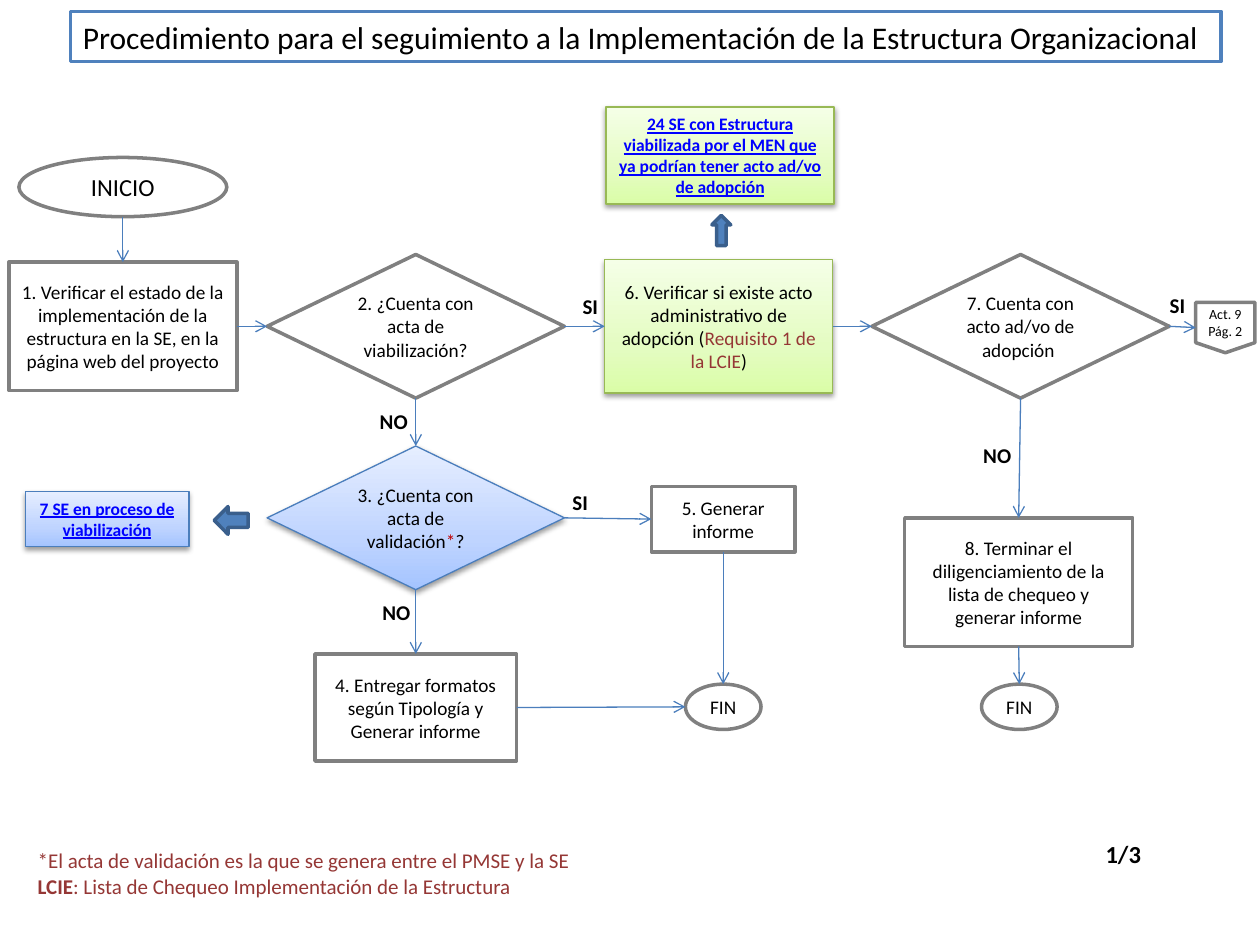
import pptx
import pptx.util
import pptx.dml.color
import pptx.enum.shapes
import pptx.enum.text
import pptx.oxml
import pptx.oxml.ns
from lxml import etree

RGB = pptx.dml.color.RGBColor
KIND = pptx.enum.shapes.MSO_SHAPE
ALIGN = pptx.enum.text.PP_ALIGN
ANCHOR = pptx.enum.text.MSO_ANCHOR
FIT = pptx.enum.text.MSO_AUTO_SIZE
Pt = pptx.util.Pt
qn = pptx.oxml.ns.qn

BLACK = RGB(0x00, 0x00, 0x00)
WHITE = RGB(0xFF, 0xFF, 0xFF)
GRAY = RGB(0x80, 0x80, 0x80)
BLUE = RGB(0x4F, 0x81, 0xBD)
BLUE_LINE = RGB(0x4B, 0x7E, 0xBC)
DARK_BLUE = RGB(0x3A, 0x5F, 0x8C)
GREEN_LINE = RGB(0x98, 0xB9, 0x55)
LINK_BLUE = RGB(0x00, 0x00, 0xFF)
MAROON = RGB(0x95, 0x37, 0x35)
RED = RGB(0xC0, 0x00, 0x00)
GREENS = [(0, RGB(0xDA, 0xFD, 0xA7)), (35, RGB(0xE4, 0xFC, 0xC2)), (100, RGB(0xF5, 0xFF, 0xE7))]
BLUES = [(0, RGB(0xA4, 0xC4, 0xFF)), (35, RGB(0xBF, 0xD4, 0xFF)), (100, RGB(0xE6, 0xEE, 0xFF))]

TOP, LEFT, BOTTOM, RIGHT = range(4)
COLUMNS, ROWS = 100, 75

# Keyword sets for the recurring looks
GREEN = {"fill": GREENS, "line": GREEN_LINE, "width": 0.75}
SKY = {"fill": BLUES, "line": BLUE_LINE, "width": 0.75}
LINK = {"size": 10, "color": LINK_BLUE, "bold": True, "underline": True, "grow": True}
BLOCK_ARROW = {"fill": BLUE, "line": DARK_BLUE}


class Flowchart:
    """Holds the style and the current slide; lengths are grid columns and rows."""

    font = "Calibri"

    def __init__(self, deck):
        self.slide = deck.slides.add_slide(deck.slide_layouts[6])
        self.column = deck.slide_width / COLUMNS
        self.row = deck.slide_height / ROWS

    def place(self, at):
        left, top, width, height = at
        return [int(length) for length in (left * self.column, top * self.row,
                                           width * self.column, height * self.row)]

    def set_text(self, holder, paragraphs, size=11, color=BLACK, align=ALIGN.CENTER,
                 grow=False, **formats):
        """Each paragraph is a list of (text, format changes)."""
        frame = holder.text_frame
        frame.word_wrap = True
        frame.vertical_anchor = ANCHOR.TOP if grow else ANCHOR.MIDDLE
        frame.auto_size = FIT.SHAPE_TO_FIT_TEXT if grow else FIT.NONE
        if isinstance(paragraphs, str):
            paragraphs = [[(paragraphs, {})]]
        for number, runs in enumerate(paragraphs):
            paragraph = frame.add_paragraph() if number else frame.paragraphs[0]
            paragraph.alignment = align
            for words, changes in runs:
                run = paragraph.add_run()
                run.text = words
                values = {"name": self.font, "size": Pt(size), "color": color,
                          **formats, **changes}
                run.font.color.rgb = values.pop("color")
                for attribute, value in values.items():
                    setattr(run.font, attribute, value)

    def node(self, kind, at, words="", fill=None, line=GRAY, width=2, **style):
        shape = self.slide.shapes.add_shape(kind, *self.place(at))
        shape.shadow.inherit = False
        shape.line.color.rgb = line
        shape.line.width = Pt(width)
        if fill is None:
            shape.fill.background()
        elif isinstance(fill, list):
            self.shade(shape, fill)
        else:
            shape.fill.solid()
            shape.fill.fore_color.rgb = fill
        if words:
            self.set_text(shape, words, **style)
        return shape

    def shade(self, shape, stops):
        """Bottom-to-top gradient with a soft shadow below."""
        shape.fill.gradient()
        shape.fill.gradient_angle = 90
        stop_list = shape.element.spPr.find(".//" + qn("a:gsLst"))
        for old in list(stop_list):
            stop_list.remove(old)
        for position, color in stops:
            stop = etree.SubElement(stop_list, qn("a:gs"), pos=str(position * 1000))
            etree.SubElement(stop, qn("a:srgbClr"), val=str(color))
        effects = shape.element.spPr.find(qn("a:effectLst"))
        shadow = etree.SubElement(effects, qn("a:outerShdw"), blurRad=str(int(Pt(3.1))),
                                  dist=str(int(Pt(1.6))), dir="5400000", rotWithShape="0")
        tone = etree.SubElement(shadow, qn("a:srgbClr"), val=str(BLACK))
        etree.SubElement(tone, qn("a:alpha"), val="38000")

    def label(self, at, words, size=12, **style):
        box = self.slide.shapes.add_textbox(*self.place(at))
        self.set_text(box, words, size=size, grow=True, **style)

    @staticmethod
    def side_point(shape, side):
        across = {LEFT: 0, RIGHT: 1}.get(side, 0.5)
        down = {TOP: 0, BOTTOM: 1}.get(side, 0.5)
        return int(shape.left + across * shape.width), int(shape.top + down * shape.height)

    def arrow(self, start, start_side, end, end_side):
        link = self.slide.shapes.add_connector(
            pptx.enum.shapes.MSO_CONNECTOR.STRAIGHT,
            *self.side_point(start, start_side), *self.side_point(end, end_side))
        # Ellipses number their sites differently, apart from the top
        for shape, side, connect in ((start, start_side, link.begin_connect),
                                     (end, end_side, link.end_connect)):
            if side == TOP or shape.auto_shape_type != KIND.OVAL:
                connect(shape, side)
        link.line.color.rgb = BLUE_LINE
        link.line.width = Pt(0.75)
        outline = link.element.spPr.find(qn("a:ln"))
        etree.SubElement(outline, qn("a:tailEnd"), type="arrow")
        etree.SubElement(link.element.spPr, qn("a:effectLst"))


def main():
    deck = pptx.Presentation()
    deck.slide_width = pptx.util.Inches(10)
    deck.slide_height = pptx.util.Inches(7.5)
    chart = Flowchart(deck)
    node = chart.node

    # Title
    node(KIND.RECTANGLE, (5.6, 0.9, 91.3, 4),
         "Procedimiento para el seguimiento a la Implementación de la Estructura Organizacional",
         fill=WHITE, line=BLUE, size=18, align=ALIGN.LEFT, grow=True)

    # Start and end points
    inicio = node(KIND.OVAL, (1.5, 12.5, 16.5, 4.7), "INICIO", size=14)
    fin_informe, fin_lista = [node(KIND.OVAL, (left, 54.3, 6, 3.6), "FIN")
                              for left in (54.4, 77.9)]

    # Decisions
    decision = KIND.FLOWCHART_DECISION
    viabilizacion = node(decision, (21.2, 20.2, 23.6, 11.4),
                         "2. ¿Cuenta con acta de viabilización?")
    validacion = node(decision, (21.2, 35.4, 23.6, 11.4),
                      [[("3. ¿Cuenta con acta de validación", {}), ("*", {"color": RED}),
                        ("?", {})]], **SKY)
    adopcion = node(decision, (69.2, 20.2, 23.6, 11.4), "7. Cuenta con acto ad/vo de adopción ")

    # Activities
    estado = node(KIND.RECTANGLE, (0.7, 20.8, 18.1, 10.2),
                  "1. Verificar el estado de la implementación de la estructura en la SE, "
                  "en la página web del proyecto")
    formatos = node(KIND.RECTANGLE, (25, 51.9, 16, 8.5),
                    "4. Entregar formatos según Tipología y Generar informe")
    informe = node(KIND.RECTANGLE, (51.7, 38.6, 11.4, 5.2), "5. Generar informe")
    acto = node(KIND.RECTANGLE, (48, 20.6, 18.1, 10.6),
                [[("6. Verificar si existe acto administrativo de adopción (", {}),
                  ("Requisito 1 de la LCIE", {"color": MAROON}), (")", {})]], **GREEN)
    lista = node(KIND.RECTANGLE, (71.8, 41.1, 18.1, 10.2),
                 "8. Terminar el diligenciamiento de la lista de chequeo y generar informe")
    siguiente = node(KIND.FLOWCHART_OFFPAGE_CONNECTOR, (94.9, 24, 4.7, 4),
                     [[("Act. 9", {})], [("Pág. 2", {})]], fill=WHITE, size=8)

    # Result boxes with their block arrows
    node(KIND.RECTANGLE, (48.1, 8.5, 18.1, 7.7),
         "24 SE con Estructura viabilizada por el MEN que ya podrían tener acto ad/vo de adopción",
         **GREEN, **LINK)
    node(KIND.UP_ARROW, (56.5, 17.1, 1.5, 2.4), **BLOCK_ARROW)
    node(KIND.RECTANGLE, (2, 39, 13, 4.4), "7 SE en proceso de viabilización", **SKY, **LINK)
    node(KIND.LEFT_ARROW, (17, 40.2, 2.7, 2.2), **BLOCK_ARROW)

    # Flow
    for step in (
        (inicio, BOTTOM, estado, TOP),
        (estado, RIGHT, viabilizacion, LEFT),
        (viabilizacion, RIGHT, acto, LEFT),
        (viabilizacion, BOTTOM, validacion, TOP),
        (acto, RIGHT, adopcion, LEFT),
        (adopcion, RIGHT, siguiente, LEFT),
        (adopcion, BOTTOM, lista, TOP),
        (lista, BOTTOM, fin_lista, TOP),
        (validacion, RIGHT, informe, LEFT),
        (validacion, BOTTOM, formatos, TOP),
        (formatos, RIGHT, fin_informe, LEFT),
        (informe, BOTTOM, fin_informe, TOP),
    ):
        chart.arrow(*step)

    # Branch labels
    for answer, width, corners in (
        ("SI", 4.7, ((44.5, 22.8), (91.1, 22.7), (43.7, 38.4))),
        ("NO", 5.1, ((28.7, 31.9), (76.6, 34.6), (28.9, 47.1))),
    ):
        for left, top in corners:
            chart.label((left, top, width, 3), answer, bold=True)

    # Footnotes and page count
    chart.label((2, 66.8, 47.2, 5),
                [[("*El acta de validación es la que se genera entre el PMSE y la SE", {})],
                 [("LCIE", {"bold": True}),
                  (": Lista de Chequeo Implementación de la Estructura", {})]],
                color=MAROON, align=ALIGN.LEFT)
    chart.label((86.2, 66.1, 5.9, 3.4), "1/3", size=14, bold=True)

    deck.save("out.pptx")


if __name__ == "__main__":
    main()
